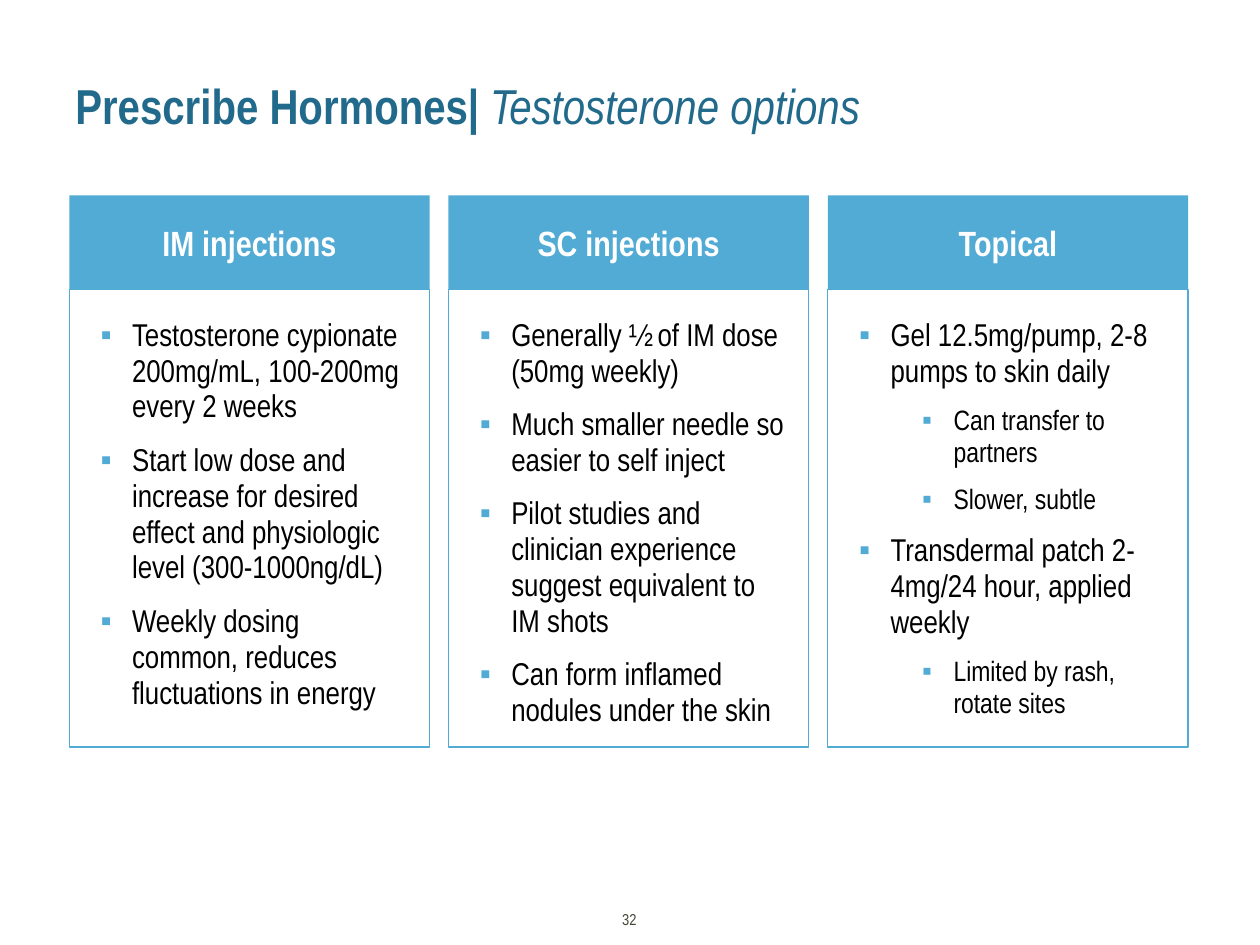
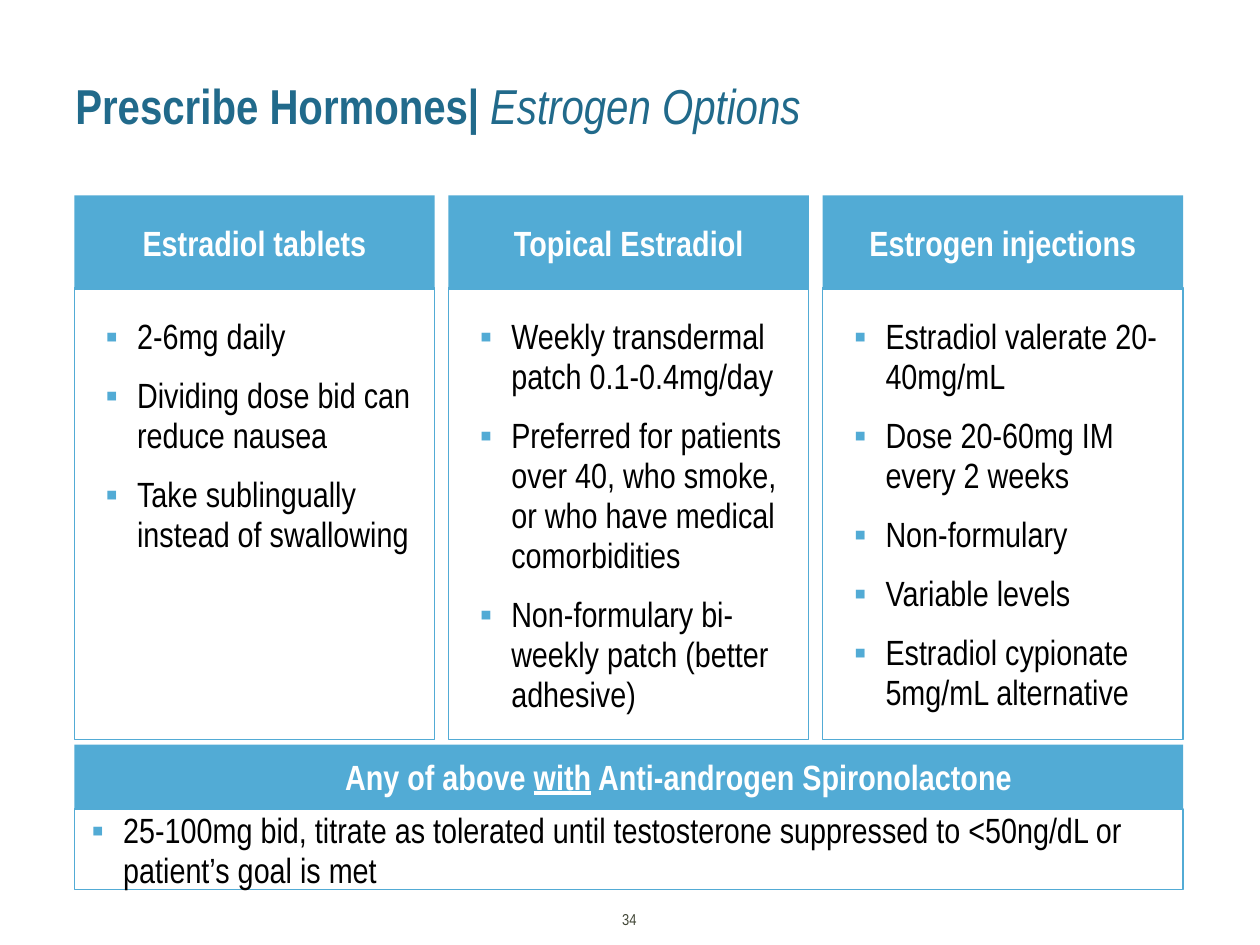
"""Build two slides on prescribing hormones, each with headed option panels."""
from lxml.etree import SubElement
from pptx import Presentation
from pptx.dml.color import RGBColor
from pptx.enum.shapes import MSO_SHAPE
from pptx.enum.text import MSO_ANCHOR, PP_ALIGN
from pptx.oxml.ns import qn
from pptx.util import Inches, Pt

FONT = "Arial Narrow"
BLUE, TEAL, WHITE, BLACK, GRAY = "52ABD5", "216A8B", "FFFFFF", "000000", "414636"
HEADER_TOP, HEADER_HEIGHT, BODY_TOP = 1.55, 0.75, 2.47
COLUMN_WIDTH, BODY_INSET, BODY_WIDTH = 2.86, 0.15, 2.63
BAND_TOP, BAND_HEIGHT, BAND_SHIFT = 5.91, 0.51, 0.79


def color(hex_string):
    return RGBColor.from_string(hex_string)


def write(shape, paragraphs, size, text_color, bold=False,
          alignment=PP_ALIGN.LEFT, line_spacing=1.0, bulleted=False):
    text_frame = shape.text_frame
    text_frame.word_wrap = True
    for index, (level, *texts) in enumerate(paragraphs):
        paragraph = text_frame.add_paragraph() if index else text_frame.paragraphs[0]
        paragraph.alignment = alignment
        paragraph.line_spacing = line_spacing
        run_size = size - 2 * level
        if bulleted:
            paragraph.level = level
            paragraph.space_before = Pt(0.55 * run_size if index else 0)
            properties = paragraph._p.get_or_add_pPr()
            properties.set("marL", str(Inches(0.25 + 0.5 * level)))
            properties.set("indent", str(Inches(-0.25)))
            bullet_color = SubElement(properties, qn("a:buClr"))
            SubElement(bullet_color, qn("a:srgbClr"), val=BLUE)
            SubElement(properties, qn("a:buFont"), typeface="Arial")
            SubElement(properties, qn("a:buChar"), char="▪")
        for text in texts:
            run = paragraph.add_run()
            run.text = text
            run.font.name = FONT
            run.font.size = Pt(run_size)
            run.font.bold = bold
            run.font.color.rgb = color(text_color)


testosterone_columns = [
    ("IM injections", [
        (0, "Testosterone cypionate 200mg/mL, 100-200mg every 2 weeks"),
        (0, "Start low dose and increase for desired effect and physiologic "
            "level (300-1000ng/dL)"),
        (0, "Weekly dosing common, reduces fluctuations in energy"),
    ]),
    ("SC injections", [
        (0, "Generally ½ of IM dose (50mg weekly)"),
        (0, "Much smaller needle so easier to self inject"),
        (0, "Pilot studies and clinician experience suggest equivalent to IM shots"),
        (0, "Can form inflamed nodules under the skin"),
    ]),
    ("Topical", [
        (0, "Gel 12.5mg/pump, 2-8 pumps to skin daily"),
        (1, "Can transfer to partners"),
        (1, "Slower, subtle"),
        (0, "Transdermal patch 2-4mg/24 hour, applied weekly"),
        (1, "Limited by rash, rotate sites"),
    ]),
]
estrogen_columns = [
    ("Estradiol tablets", [
        (0, "2-6mg daily"),
        (0, "Dividing dose bid can reduce nausea"),
        (0, "Take sublingually instead of swallowing"),
    ]),
    ("Topical Estradiol", [
        (0, "Weekly transdermal patch 0.1-0.4mg/day"),
        (0, "Preferred for patients over 40, who smoke, or who have medical "
            "comorbidities"),
        (0, "Non-formulary bi-weekly patch (better adhesive)"),
    ]),
    ("Estrogen injections", [
        (0, "Estradiol valerate 20-40mg/mL"),
        (0, "Dose 20-60mg IM every 2 weeks"),
        (0, "Non-formulary"),
        (0, "Variable levels"),
        (0, "Estradiol cypionate 5mg/mL alternative"),
    ]),
]
anti_androgen_header = ["Any of above ", "with", " Anti-androgen Spironolactone"]
anti_androgen_points = [
    (0, "25-100mg bid, titrate as tolerated until testosterone suppressed to "
        "<50ng/dL or patient’s goal is met"),
]

slide_plans = [
    ("Testosterone options", "32", testosterone_columns, 0.55, 3.01, 2.3, 3.63, 18),
    ("Estrogen Options", "34", estrogen_columns, 0.59, 2.97, 2.28, 3.59, 20),
]

presentation = Presentation()
presentation.slide_width = Inches(10)
presentation.slide_height = Inches(7.5)

for (subtitle, page_number, columns, first_left, pitch,
     panel_top, panel_height, body_size) in slide_plans:
    slide = presentation.slides.add_slide(presentation.slide_layouts[6])

    title = slide.shapes.add_textbox(Inches(0.5), Inches(0.6), Inches(9.33), Inches(0.53))
    write(title, [(0, "Prescribe Hormones| ", subtitle)], 28, TEAL, bold=True,
          line_spacing=0.9)
    subtitle_font = title.text_frame.paragraphs[0].runs[1].font
    subtitle_font.bold = False
    subtitle_font.italic = True

    footer = slide.shapes.add_textbox(Inches(4.74), Inches(7.17), Inches(0.51), Inches(0.25))
    write(footer, [(0, page_number)], 9, GRAY, alignment=PP_ALIGN.CENTER)

    blocks = []
    for column, (heading, points) in enumerate(columns):
        left = first_left + column * pitch
        blocks.append((
            [heading], points, 0,
            (left, HEADER_TOP, COLUMN_WIDTH, HEADER_HEIGHT),
            (left, panel_top, COLUMN_WIDTH, panel_height),
            (left + BODY_INSET, BODY_TOP, BODY_WIDTH, panel_height - BODY_INSET),
        ))
    if columns is estrogen_columns:
        band_width = 2 * pitch + COLUMN_WIDTH
        blocks.append((
            anti_androgen_header, anti_androgen_points, BAND_SHIFT,
            (first_left, BAND_TOP, band_width, BAND_HEIGHT),
            (first_left, BAND_TOP + BAND_HEIGHT, band_width, 0.64),
            (first_left + 0.04, 6.39, band_width, 0.74),
        ))

    for heading_texts, points, shift, header_box, panel_box, body_box in blocks:
        panel = slide.shapes.add_shape(MSO_SHAPE.RECTANGLE, *map(Inches, panel_box))
        panel.shadow.inherit = False
        panel.fill.solid()
        panel.fill.fore_color.rgb = color(WHITE)
        fill_color = panel._element.spPr.find(qn("a:solidFill"))[0]
        SubElement(fill_color, qn("a:alpha"), val="30000")
        panel.line.color.rgb = color(BLUE)
        panel.line.width = Pt(0.75)

        header = slide.shapes.add_shape(MSO_SHAPE.RECTANGLE, *map(Inches, header_box))
        header.shadow.inherit = False
        header.fill.solid()
        header.fill.fore_color.rgb = color(BLUE)
        header.line.fill.background()
        header.text_frame.vertical_anchor = MSO_ANCHOR.MIDDLE
        header.text_frame.margin_left = Inches(0.1 + shift)
        write(header, [(0, *heading_texts)], 20, WHITE, bold=True,
              alignment=PP_ALIGN.CENTER)
        for run in header.text_frame.paragraphs[0].runs[1:2]:
            run.font.underline = True

        body = slide.shapes.add_textbox(*map(Inches, body_box))
        write(body, points, body_size, BLACK, line_spacing=0.95, bulleted=True)

presentation.save("out.pptx")
